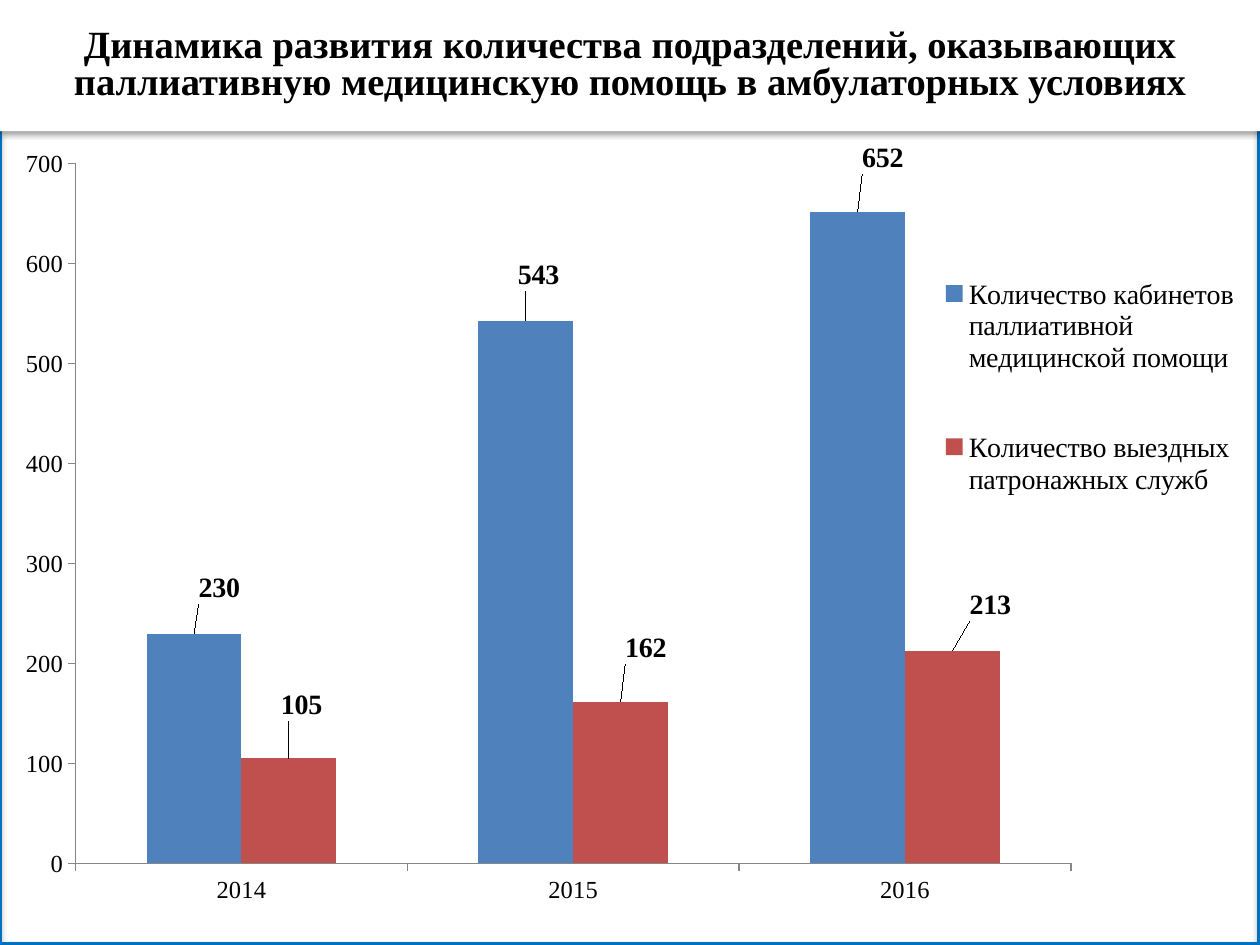
from dataclasses import dataclass

import pptx
import pptx.chart.data
import pptx.dml.color
import pptx.enum.chart
import pptx.enum.shapes
import pptx.enum.text
import pptx.oxml
import pptx.oxml.ns
import pptx.util

Pt = pptx.util.Pt
FONT = "Times New Roman"
COLORS = {
    "frame": "0070C0",
    "paper": "FFFFFF",
    "text": "000000",
    "axis": "868686",
    "offices": "4F81BD",
    "visiting": "C0504D",
}
YEARS = ["2014", "2015", "2016"]


@dataclass
class Measure:
    """A data series; label_shifts are fractions of the chart's size."""
    name: str
    color: str
    values: list[int]
    label_shifts: list[tuple[float, float]]


MEASURES = [
    Measure("Количество кабинетов паллиативной медицинской помощи", "offices",
            [230, 543, 652], [(0.02, -0.03), (0.01, -0.03), (0.02, -0.04)]),
    Measure("Количество выездных патронажных служб", "visiting",
            [105, 162, 213], [(0.01, -0.04), (0.02, -0.04), (0.03, -0.03)]),
]


def rgb(name: str) -> pptx.dml.color.RGBColor:
    return pptx.dml.color.RGBColor.from_string(COLORS[name])


def set_font(font, size: float, bold: bool = False) -> None:
    font.name = FONT
    font.size = Pt(size)
    font.bold = bold
    font.color.rgb = rgb("text")


def add_shadowed_box(slide, left: float, top: float, width: float, height: float):
    """Add a rectangle with a soft shadow falling downwards."""
    box = slide.shapes.add_shape(pptx.enum.shapes.MSO_SHAPE.RECTANGLE,
                                 Pt(left), Pt(top), Pt(width), Pt(height))
    box.shadow.inherit = False
    effects = box._element.spPr.find(pptx.oxml.ns.qn("a:effectLst"))
    effects.append(pptx.oxml.parse_xml(
        f'<a:outerShdw {pptx.oxml.ns.nsdecls("a")} blurRad="{Pt(3.1)}" '
        f'dist="{Pt(1.8)}" dir="5400000" rotWithShape="0">'
        f'<a:srgbClr val="{COLORS["text"]}"><a:alpha val="35000"/></a:srgbClr>'
        '</a:outerShdw>'))
    return box


def manual_layout(x: float, y: float, width: float = 0, height: float = 0,
                  inner: bool = False, edge: bool = False):
    """Build a chart layout; edge measures x and y from the chart's corner."""
    parts = []
    if inner:
        parts.append('<c:layoutTarget val="inner"/>')
    if edge:
        parts.append('<c:xMode val="edge"/><c:yMode val="edge"/>')
    parts.append(f'<c:x val="{x}"/><c:y val="{y}"/>')
    if width:
        parts.append(f'<c:w val="{width}"/><c:h val="{height}"/>')
    return pptx.oxml.parse_xml(
        f'<c:layout {pptx.oxml.ns.nsdecls("c")}><c:manualLayout>'
        f'{"".join(parts)}</c:manualLayout></c:layout>')


def replace_layout(parent, layout, index: int) -> None:
    for old in parent.findall(pptx.oxml.ns.qn("c:layout")):
        parent.remove(old)
    parent.insert(index, layout)


def style_axis(axis) -> None:
    axis.has_major_gridlines = False
    axis.major_tick_mark = pptx.enum.chart.XL_TICK_MARK.OUTSIDE
    axis.minor_tick_mark = pptx.enum.chart.XL_TICK_MARK.NONE
    axis.format.line.color.rgb = rgb("axis")
    axis.format.line.width = Pt(0.75)
    set_font(axis.tick_labels.font, 14)


def style_series(series, measure: Measure) -> None:
    series.format.fill.solid()
    series.format.fill.fore_color.rgb = rgb(measure.color)
    series.invert_if_negative = False
    series.data_labels.show_value = True
    set_font(series.data_labels.font, 16, bold=True)
    for index in range(len(measure.values)):
        label = series.points[index].data_label
        set_font(label.font, 16, bold=True)
        label.position = pptx.enum.chart.XL_LABEL_POSITION.OUTSIDE_END
    labels = series._element.findall(
        f'{pptx.oxml.ns.qn("c:dLbls")}/{pptx.oxml.ns.qn("c:dLbl")}')
    for label, shift in zip(labels, measure.label_shifts):
        replace_layout(label, manual_layout(*shift), 1)


def add_dynamics_chart(slide) -> None:
    data = pptx.chart.data.CategoryChartData()
    data.categories = YEARS
    for measure in MEASURES:
        data.add_series(measure.name, measure.values)
    chart = slide.shapes.add_chart(
        pptx.enum.chart.XL_CHART_TYPE.COLUMN_CLUSTERED,
        Pt(0), Pt(75), Pt(720), Pt(465), data).chart
    chart.has_title = False
    chart.font.name = "Calibri"
    chart.font.size = Pt(10)
    chart.font.color.rgb = rgb("text")
    style_axis(chart.category_axis)
    style_axis(chart.value_axis)
    chart.value_axis.minimum_scale = 0
    chart.value_axis.maximum_scale = 700
    chart.value_axis.major_unit = 100

    plot = chart.plots[0]
    plot.gap_width = 150
    plot.overlap = 0
    plot.vary_by_categories = False
    for series, measure in zip(plot.series, MEASURES):
        style_series(series, measure)

    chart.has_legend = True
    chart.legend.position = pptx.enum.chart.XL_LEGEND_POSITION.RIGHT
    chart.legend.include_in_layout = False
    set_font(chart.legend.font, 16)
    replace_layout(chart.legend._element,
                   manual_layout(0.74, 0.11, 0.25, 0.41, edge=True), 1)
    plot_area = chart._chartSpace.chart.plotArea
    replace_layout(plot_area, manual_layout(0.06, 0.04, 0.79, 0.86,
                                            inner=True, edge=True), 0)


def add_title(slide) -> None:
    box = add_shadowed_box(slide, 0, 0, 720, 75)
    box.fill.solid()
    box.fill.fore_color.rgb = rgb("paper")
    box.line.fill.background()
    frame = box.text_frame
    frame.word_wrap = True
    frame.vertical_anchor = pptx.enum.text.MSO_ANCHOR.MIDDLE
    para = frame.paragraphs[0]
    para.text = ("Динамика развития количества подразделений, оказывающих "
                 "паллиативную медицинскую помощь в амбулаторных условиях")
    para.alignment = pptx.enum.text.PP_ALIGN.CENTER
    para.line_spacing = 0.8
    set_font(para.font, 22, bold=True)


def main() -> None:
    deck = pptx.Presentation()
    deck.slide_width, deck.slide_height = Pt(720), Pt(540)
    slide = deck.slides.add_slide(deck.slide_layouts[6])
    border = add_shadowed_box(slide, -0.5, 0, 720.5, 540)
    border.fill.background()
    border.line.color.rgb = rgb("frame")
    border.line.width = Pt(3)
    add_dynamics_chart(slide)
    add_title(slide)
    deck.save("out.pptx")


if __name__ == "__main__":
    main()
